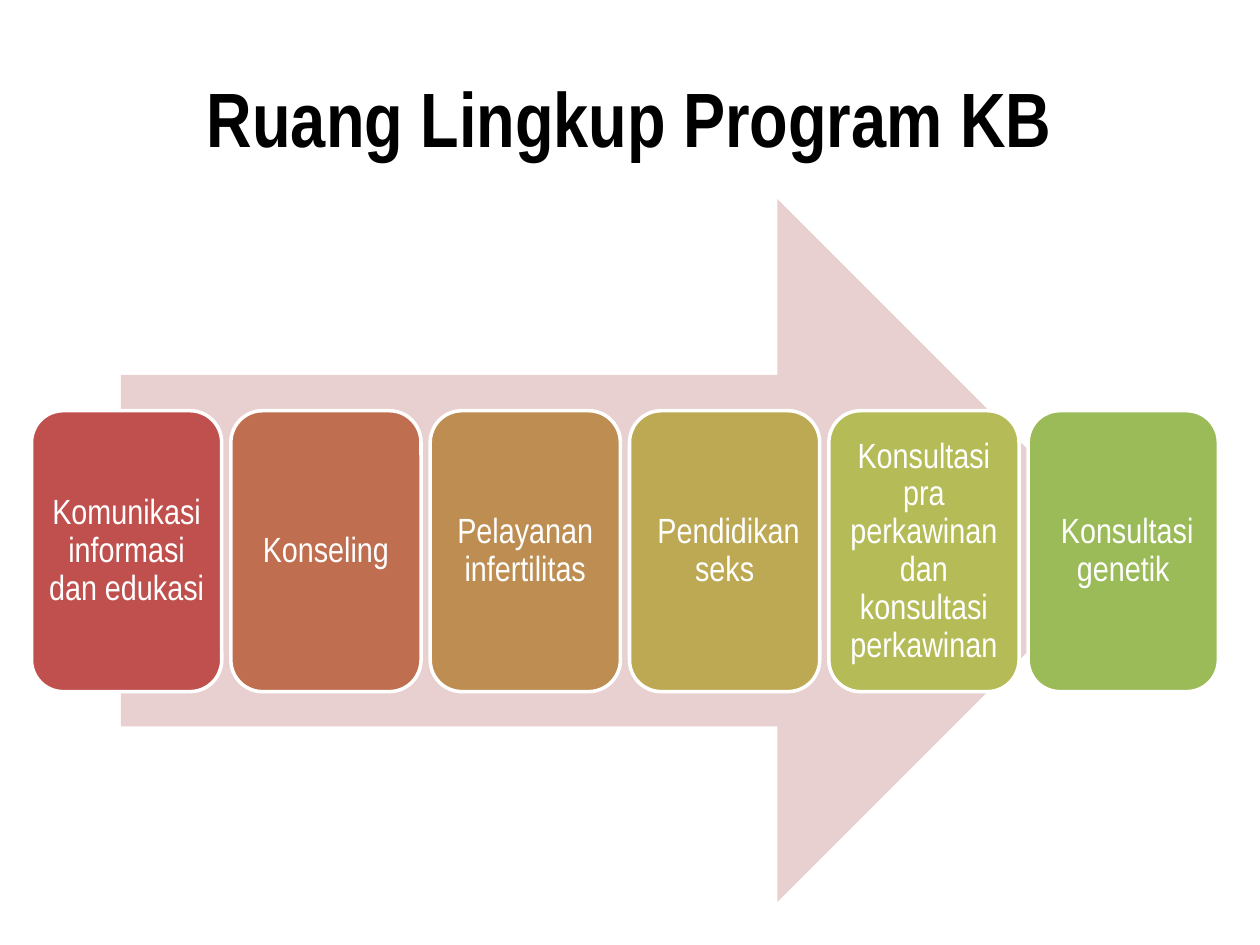
from pptx import Presentation
from pptx.dml.color import RGBColor
from pptx.enum import shapes, text
from pptx.util import Inches, Pt

FONT = "Arial Narrow"
WHITE = "FFFFFF"

SCOPES = [
    ("Komunikasi informasi dan edukasi", "C0504D"),
    ("Konseling", "BF6F4F"),
    ("Pelayanan infertilitas", "BE8D52"),
    (" Pendidikan seks", "BDA954"),
    ("Konsultasi pra perkawinan dan konsultasi perkawinan", "B5BC57"),
    (" Konsultasi genetik", "9BBB59"),
]
CARD_LEFT, CARD_TOP = 0.25, 3.26
CARD_WIDTH, CARD_HEIGHT = 1.51, 2.23
CARD_PITCH = 1.582


def rgb(code):
    return RGBColor.from_string(code)


def write(holder, words, size, color, bold=False, spacing=1.0, side=0.1, edge=0.05):
    """Fill a shape or text box with one centred paragraph."""
    frame = holder.text_frame
    frame.word_wrap = True
    frame.vertical_anchor = text.MSO_ANCHOR.MIDDLE
    frame.margin_left = frame.margin_right = Inches(side)
    frame.margin_top = frame.margin_bottom = Inches(edge)
    paragraph = frame.paragraphs[0]
    paragraph.alignment = text.PP_ALIGN.CENTER
    paragraph.line_spacing = spacing
    run = paragraph.add_run()
    run.text = words
    run.font.name = FONT
    run.font.size = Pt(size)
    run.font.bold = bold
    run.font.color.rgb = rgb(color)


def add_block(slide, kind, left, top, width, height, fill, line=None):
    block = slide.shapes.add_shape(
        kind, Inches(left), Inches(top), Inches(width), Inches(height))
    block.shadow.inherit = False
    block.fill.solid()
    block.fill.fore_color.rgb = rgb(fill)
    if line:
        block.line.color.rgb = rgb(line)
        block.line.width = Pt(2)
    else:
        block.line.fill.background()
    return block


def add_title(slide, words):
    title = slide.shapes.add_textbox(Inches(0.5), Inches(0.3), Inches(9), Inches(1.25))
    write(title, words, 44, "000000", bold=True)


def add_card(slide, index, words, fill):
    card = add_block(slide, shapes.MSO_SHAPE.ROUNDED_RECTANGLE,
                     CARD_LEFT + index * CARD_PITCH, CARD_TOP,
                     CARD_WIDTH, CARD_HEIGHT, fill, line=WHITE)
    # The rounded corners already inset the text
    write(card, words, 20, WHITE, spacing=0.9, side=0.01, edge=0.01)


def main():
    deck = Presentation()
    deck.slide_width, deck.slide_height = Inches(10), Inches(7.5)
    slide = deck.slides.add_slide(deck.slide_layouts[6])

    add_title(slide, "Ruang Lingkup Program KB")

    # Arrow behind the row of cards
    add_block(slide, shapes.MSO_SHAPE.RIGHT_ARROW, 0.96, 1.58, 8, 5.58, "E8D0D0")

    # One card for each part of the programme
    for index, (words, fill) in enumerate(SCOPES):
        add_card(slide, index, words, fill)

    deck.save("out.pptx")


if __name__ == "__main__":
    main()
